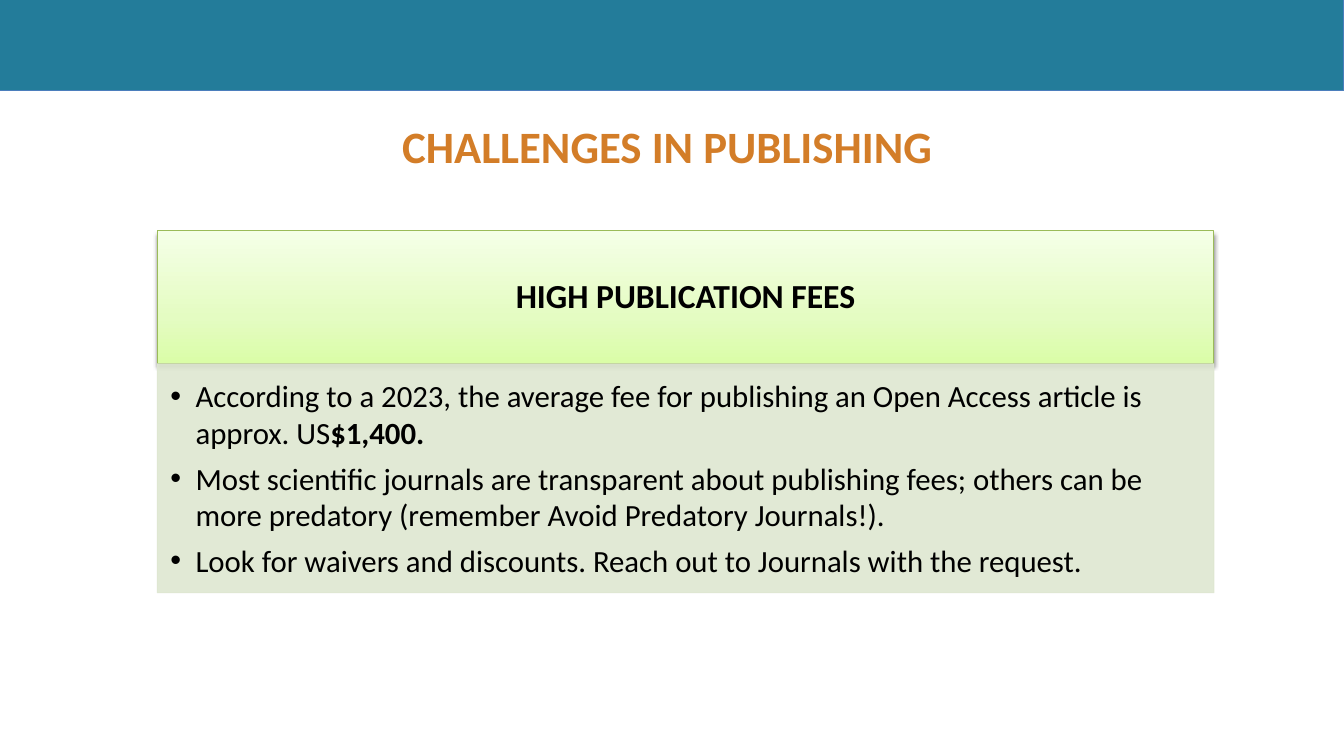
import copy

import pptx
import pptx.dml.color
import pptx.enum.shapes
import pptx.enum.text
import pptx.oxml
import pptx.oxml.ns
import pptx.util
from pptx.util import Inches

RGBColor = pptx.dml.color.RGBColor
PP_ALIGN = pptx.enum.text.PP_ALIGN
MSO_ANCHOR = pptx.enum.text.MSO_ANCHOR
qn = pptx.oxml.ns.qn
NS = pptx.oxml.ns.nsdecls("a")

TEAL = RGBColor(0x23, 0x7C, 0x9A)
BLUE = RGBColor(0x4B, 0x7E, 0xBC)
ORANGE = RGBColor(0xD3, 0x7D, 0x28)
GREEN = RGBColor(0x9B, 0xBB, 0x59)
SAGE = RGBColor(0xDE, 0xE7, 0xD1)
BLACK = RGBColor(0, 0, 0)
HEADER_STOPS = [
    (0, RGBColor(0xDA, 0xFD, 0xA7)),
    (0.35, RGBColor(0xE4, 0xFC, 0xC2)),
    (1, RGBColor(0xF5, 0xFF, 0xE7)),
]
FEE_POINTS = [
    [("According to a 2023, the average fee for publishing an Open Access article is approx. US", False),
     ("$1,400.", True)],
    [("Most scientific journals are transparent about publishing fees; others can be more predatory "
      "(remember Avoid Predatory Journals!).", False)],
    [("Look for waivers and discounts. Reach out to Journals with the request.", False)],
]


class SlideBuilder:
    """Hold the text style and the current slide, and draw each kind of element."""

    def __init__(self, slide, font="Calibri"):
        self.s = slide
        self.font = font

    def rect(self, box, fill, line):
        sp = self.s.shapes.add_shape(
            pptx.enum.shapes.MSO_SHAPE.RECTANGLE, *map(Inches, box))
        sp.shadow.inherit = False
        sp.fill.solid()
        sp.fill.fore_color.rgb = fill
        sp.line.color.rgb = line
        sp.line.width = pptx.util.Pt(0.75)
        return sp

    def textbox(self, box):
        return self.s.shapes.add_textbox(*map(Inches, box))

    def gradient(self, sp, stops):
        sp.fill.gradient()
        sp.fill.gradient_angle = 90
        gs_list = sp.fill.gradient_stops
        first = sp.element.spPr.find(".//" + qn("a:gs"))
        first.addnext(copy.deepcopy(first))
        for stop, (position, color) in zip(gs_list, stops):
            stop.position = position
            stop.color.rgb = color

    def shadow(self, sp):
        effects = sp.element.spPr.find(qn("a:effectLst"))
        effects.append(pptx.oxml.parse_xml(
            f'<a:outerShdw {NS} blurRad="40000" dist="20000" dir="5400000" rotWithShape="0">'
            '<a:srgbClr val="000000"><a:alpha val="38000"/></a:srgbClr></a:outerShdw>'))

    def translucent(self, sp, percent):
        for color in sp.element.spPr.iter(qn("a:srgbClr")):
            color.append(pptx.oxml.parse_xml(f'<a:alpha {NS} val="{percent * 1000}"/>'))

    def frame(self, sp, insets, anchor):
        tf = sp.text_frame
        tf.word_wrap = True
        tf.vertical_anchor = anchor
        tf.margin_left, tf.margin_top, tf.margin_right, tf.margin_bottom = map(Inches, insets)
        return tf

    def style(self, r, size, color, bold):
        r.font.name = self.font
        r.font.size = pptx.util.Pt(size)
        r.font.color.rgb = color
        r.font.bold = bold

    def heading(self, sp, text, size, color, insets, spacing=1.0):
        tf = self.frame(sp, insets, MSO_ANCHOR.MIDDLE)
        tf.text = text
        p = tf.paragraphs[0]
        p.alignment = PP_ALIGN.CENTER
        p.line_spacing = spacing
        self.style(p.runs[0], size, color, True)

    def bullets(self, sp, points, size, color, insets):
        tf = self.frame(sp, insets, MSO_ANCHOR.TOP)
        for i, parts in enumerate(points):
            p = tf.add_paragraph() if i else tf.paragraphs[0]
            p.alignment = PP_ALIGN.LEFT
            p.level = 1
            p.space_after = pptx.util.Pt(6)
            pPr = p._p.get_or_add_pPr()
            pPr.set("marL", str(Inches(0.25)))
            pPr.set("indent", str(-Inches(0.25)))
            pPr.append(pptx.oxml.parse_xml(f'<a:buFont {NS} typeface="Arial"/>'))
            pPr.append(pptx.oxml.parse_xml(f'<a:buChar {NS} char="•"/>'))
            for text, bold in parts:
                r = p.add_run()
                r.text = text
                self.style(r, size, color, bold)


def main():
    prs = pptx.Presentation()
    prs.slide_width, prs.slide_height = Inches(13.33), Inches(7.5)
    b = SlideBuilder(prs.slides.add_slide(prs.slide_layouts[6]))

    b.rect((0, 0, 13.33, 0.9), TEAL, BLUE)
    title = b.textbox((0.62, 1.09, 12, 0.65))
    b.heading(title, "CHALLENGES IN PUBLISHING", 32, ORANGE, (0.1, 0.05, 0.1, 0))

    left, top, width, header_height = 1.56, 2.29, 10.48, 1.32
    header = b.rect((left, top, width, header_height), SAGE, GREEN)
    b.gradient(header, HEADER_STOPS)
    b.shadow(header)
    b.heading(header, "HIGH PUBLICATION FEES", 24, BLACK, (0.19, 0.11, 0.19, 0.11), 0.9)

    body = b.rect((left, top + header_height, width, 2.27), SAGE, SAGE)
    b.translucent(body, 90)
    b.bullets(body, FEE_POINTS, 22, BLACK, (0.13, 0.13, 0.17, 0.19))

    prs.save("out.pptx")


if __name__ == "__main__":
    main()
